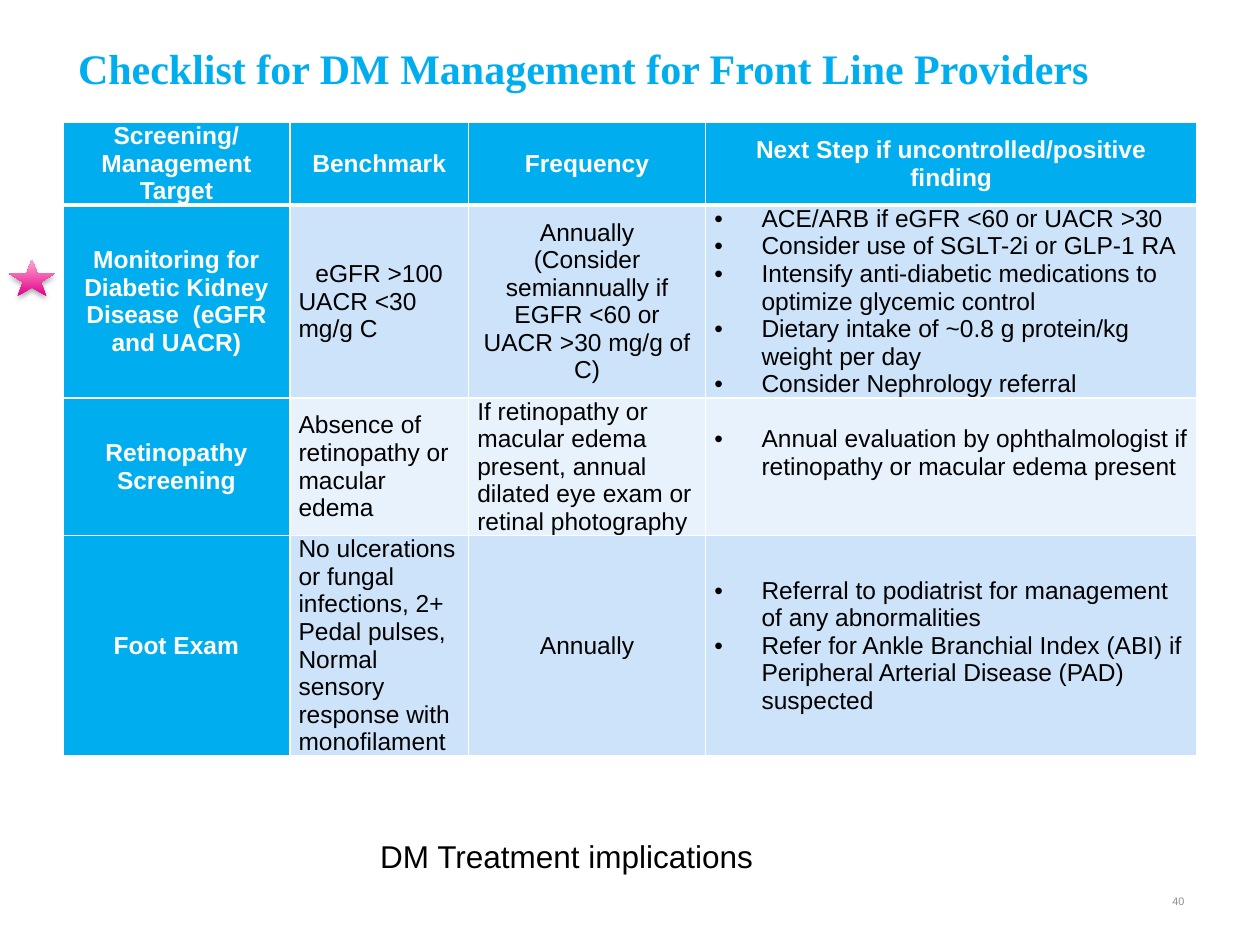
from lxml import etree
from pptx import Presentation
from pptx.dml.color import RGBColor
from pptx.enum.shapes import MSO_SHAPE
from pptx.enum.text import MSO_ANCHOR, PP_ALIGN
from pptx.oxml import parse_xml
from pptx.oxml.ns import nsdecls, qn
from pptx.util import Pt

STAR = MSO_SHAPE.STAR_5_POINT
MIDDLE, TOP = MSO_ANCHOR.MIDDLE, MSO_ANCHOR.TOP
LEFT, CENTER, RIGHT = PP_ALIGN.LEFT, PP_ALIGN.CENTER, PP_ALIGN.RIGHT
# One letter per paragraph: l left, c centred, b bulleted
ALIGN = {"l": LEFT, "c": CENTER, "b": LEFT}

BLUE, WHITE, BLACK, GRAY = "00AEEF", "FFFFFF", "000000", "8C8C8C"
BANDS = ["CCE3F9", "E7F2FC"]
INDENT = 27

WIDTHS = [129.6, 102.2, 135.4, 280.8]
HEIGHTS = [46.5, 110, 78.5, 125.5]
ROWS = [
    [("c", ["Screening/ Management Target"]), ("c", ["Benchmark"]),
     ("c", ["Frequency"]),
     ("c", ["Next Step if uncontrolled/positive finding"])],
    [("c", ["Monitoring for Diabetic Kidney Disease  (eGFR and UACR)"]),
     ("cl", ["eGFR >100", "UACR <30 mg/g C"]),
     ("cc", ["Annually",
             "(Consider semiannually if EGFR <60 or UACR >30 mg/g of C)"]),
     ("bbbbb", ["ACE/ARB if eGFR <60 or UACR >30",
                "Consider use of SGLT-2i or GLP-1 RA",
                "Intensify anti-diabetic medications to optimize glycemic control",
                "Dietary intake of ~0.8 g protein/kg weight per day",
                "Consider Nephrology referral"])],
    [("c", ["Retinopathy Screening"]),
     ("l", ["Absence of retinopathy or macular edema"]),
     ("l", ["If retinopathy or macular edema present, annual dilated eye "
            "exam or retinal photography"]),
     ("b", ["Annual evaluation by ophthalmologist if retinopathy or macular "
            "edema present"])],
    [("c", ["Foot Exam"]),
     ("l", ["No ulcerations or fungal infections, 2+ Pedal pulses, Normal "
            "sensory response with monofilament"]),
     ("c", ["Annually"]),
     ("bb", ["Referral to podiatrist for management of any abnormalities",
             "Refer for Ankle Branchial Index (ABI) if Peripheral Arterial "
             "Disease (PAD) suspected"])],
]


def color(code):
    return RGBColor.from_string(code)


class Deck:
    font = "Arial"

    def __init__(self):
        self.prs = Presentation()
        self.prs.slide_width, self.prs.slide_height = Pt(720), Pt(540)
        self.slide = self.prs.slides.add_slide(self.prs.slide_layouts[5])

    def style(self, para, size, code, bold=False, align=LEFT, font=None):
        para.alignment = align
        for run in para.runs:
            run.font.name = font or self.font
            run.font.size = Pt(size)
            run.font.bold = bold
            run.font.color.rgb = color(code)

    def title(self, text, x, y, w, h):
        box = self.slide.shapes.title
        box.left, box.top, box.width, box.height = map(Pt, (x, y, w, h))
        frame = box.text_frame
        frame.text = text
        frame.word_wrap = True
        frame.vertical_anchor = MIDDLE
        self.style(frame.paragraphs[0], 24, BLUE, True, font="Times New Roman")

    def text(self, text, x, y, w, h, size, code, align=LEFT, anchor=TOP):
        box = self.slide.shapes.add_textbox(*map(Pt, (x, y, w, h)))
        frame = box.text_frame
        frame.text = text
        frame.word_wrap = True
        frame.vertical_anchor = anchor
        self.style(frame.paragraphs[0], size, code, align=align)

    def bullet(self, para):
        props = para._p.get_or_add_pPr()
        props.set("marL", str(Pt(INDENT)))
        props.set("indent", str(-Pt(INDENT)))
        etree.SubElement(props, qn("a:buFont")).set("typeface", self.font)
        etree.SubElement(props, qn("a:buChar")).set("char", "•")

    def border(self, cell, top, bottom):
        props = cell._tc.get_or_add_tcPr()
        sides = {"L": 1, "R": 1, "T": top, "B": bottom}
        for i, (side, width) in enumerate(sides.items()):
            props.insert(i, parse_xml(
                f'<a:ln{side} {nsdecls("a")} w="{Pt(width)}"><a:solidFill>'
                f'<a:srgbClr val="{WHITE}"/></a:solidFill></a:ln{side}>'))

    def cell(self, cell, modes, lines, fill, code, bold, pad):
        cell.margin_left = cell.margin_right = Pt(pad)
        cell.margin_top = cell.margin_bottom = 0
        cell.vertical_anchor = MIDDLE
        cell.fill.solid()
        cell.fill.fore_color.rgb = color(fill)
        cell.text_frame.text = "\n".join(lines)
        for mode, para in zip(modes, cell.text_frame.paragraphs):
            if mode == "b":
                self.bullet(para)
            self.style(para, 14, code, bold, ALIGN[mode])

    def table(self, rows, x, y, widths, heights):
        size = (x, y, sum(widths), sum(heights))
        table = self.slide.shapes.add_table(
            len(rows), len(widths), *map(Pt, size)).table
        for col, width in zip(table.columns, widths):
            col.width = Pt(width)
        for r, row in enumerate(rows):
            table.rows[r].height = Pt(heights[r])
            for c, (modes, lines) in enumerate(row):
                head = r == 0 or c == 0
                fill = BLUE if head else BANDS[(r - 1) % 2]
                cell = table.cell(r, c)
                self.cell(cell, modes, lines, fill, WHITE if head else BLACK,
                          head, 3.6 if r == 0 else 5)
                self.border(cell, 3 if r == 1 else 1, 3 if r == 0 else 1)
        return table

    def star(self, x, y, w, h, low, high):
        star = self.slide.shapes.add_shape(STAR, *map(Pt, (x, y, w, h)))
        star.line.fill.background()
        star.fill.gradient()
        star.fill.gradient_angle = 90
        for stop, code in zip(star.fill.gradient_stops, (low, high)):
            stop.color.rgb = color(code)
        # Soft shadow just below the star
        star.shadow.inherit = False
        star._element.spPr.find(qn("a:effectLst")).append(parse_xml(
            f'<a:outerShdw {nsdecls("a")} blurRad="{Pt(3.1)}" '
            f'dist="{Pt(1.8)}" dir="5400000" rotWithShape="0">'
            f'<a:srgbClr val="{BLACK}"><a:alpha val="35000"/></a:srgbClr>'
            '</a:outerShdw>'))


def main():
    deck = Deck()
    deck.title("Checklist for DM Management for Front Line Providers",
               37.4, 20.2, 648, 36.7)

    # Checklist; the eye exam step sits one line above the middle of its row
    table = deck.table(ROWS, 36, 70, WIDTHS, HEIGHTS)
    table.cell(2, 3).margin_bottom = Pt(15.7)

    # Marker beside the kidney row
    deck.star(5, 148.3, 26.6, 20.9, "E3008F", "FFAACC")

    # Caption and page number
    deck.text("DM Treatment implications", 210.2, 474.5, 231, 28.8, 18, BLACK)
    deck.text("40", 516.2, 500.4, 167.8, 28.8, 6.2, GRAY, RIGHT, MIDDLE)
    deck.prs.save("out.pptx")


if __name__ == "__main__":
    main()
